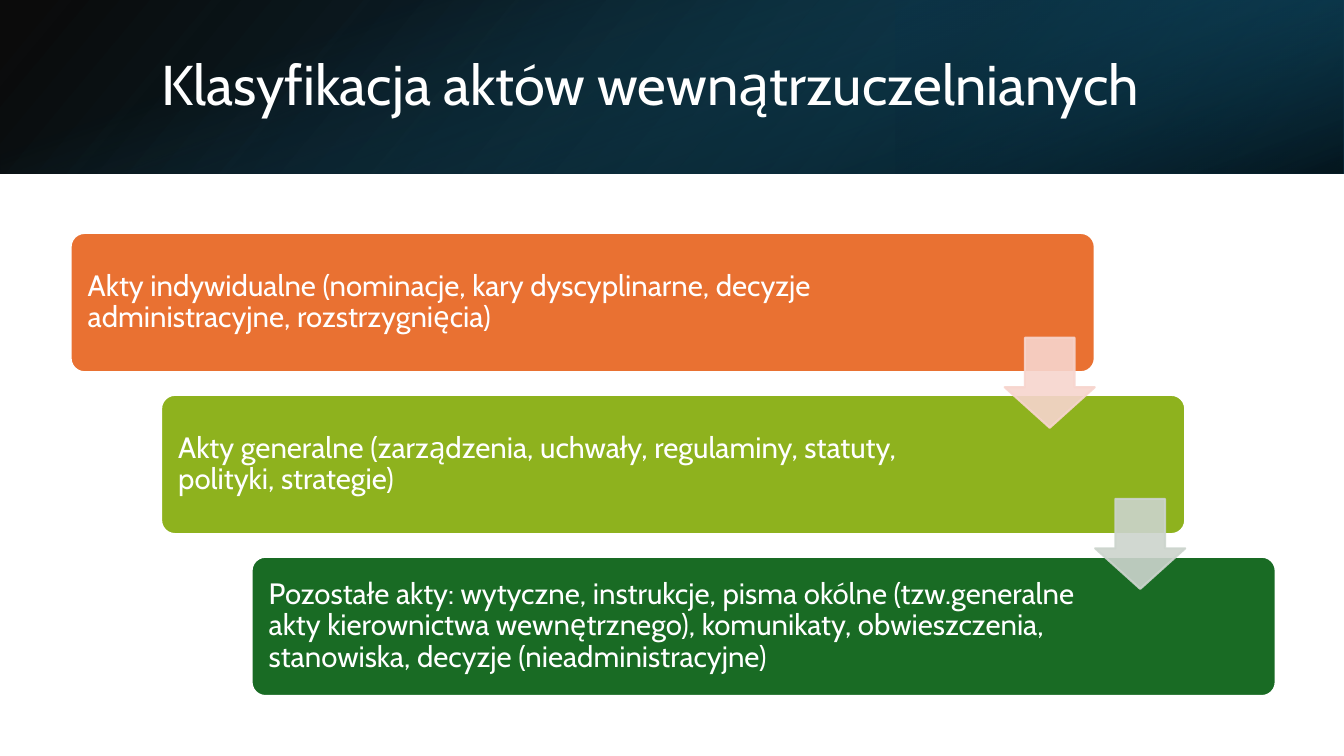
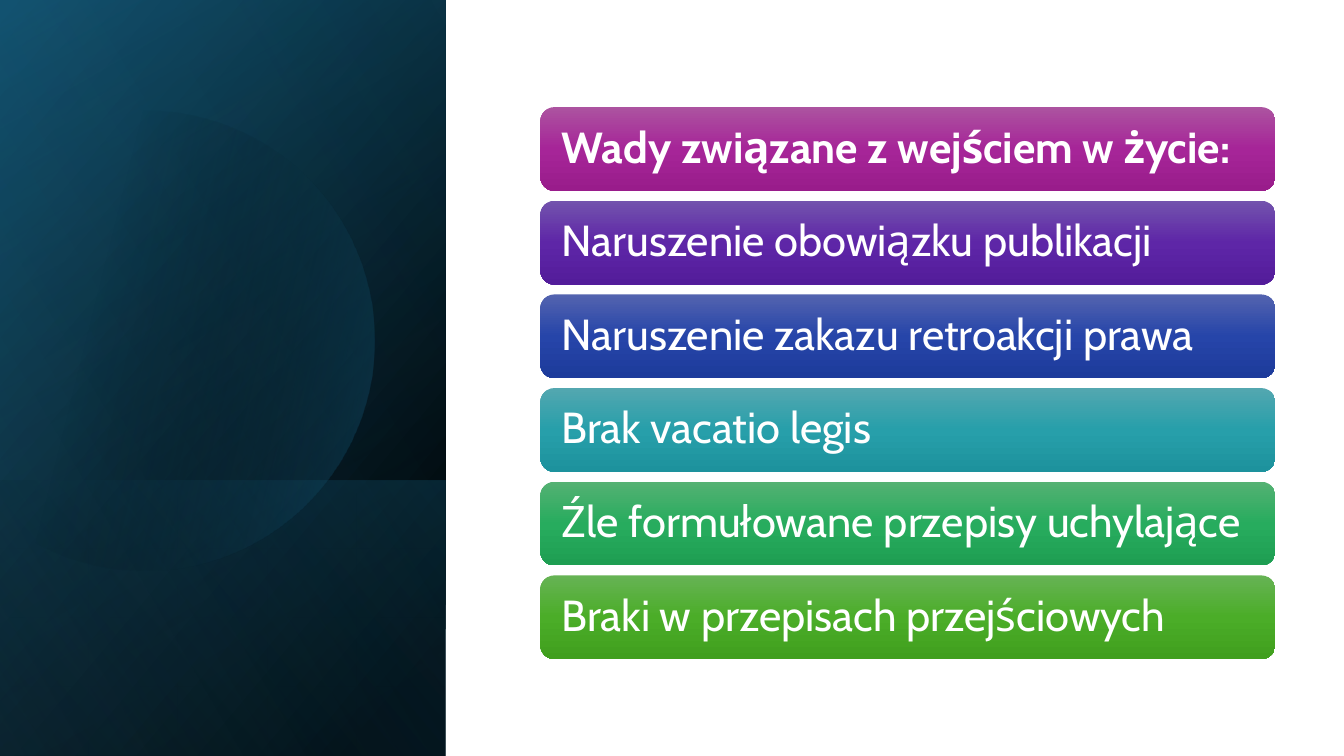
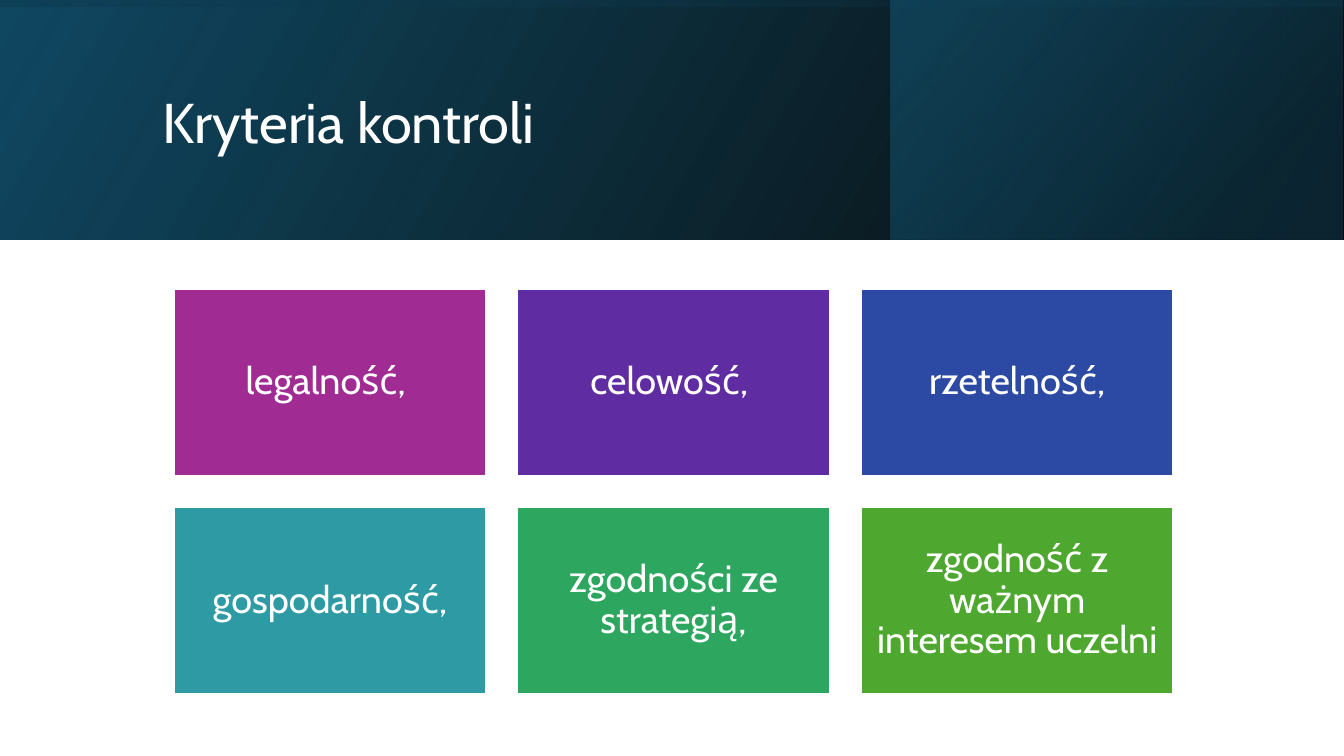
"""Build three slides on internal university acts, their defects and the control criteria."""
import math

from lxml import etree
from pptx import Presentation
from pptx import util as u
from pptx.dml.color import RGBColor
from pptx.enum import shapes, text
from pptx.oxml.ns import qn

FONT = "Cabin"
WHITE = RGBColor(0xFF, 0xFF, 0xFF)
BLACK = RGBColor(0x00, 0x00, 0x00)
NAVY = RGBColor(0x10, 0x48, 0x62)
DEEP = RGBColor(0x0B, 0x30, 0x41)
TEAL = RGBColor(0x15, 0x60, 0x82)
SKY = RGBColor(0x46, 0xB1, 0xE1)
ORANGE = RGBColor(0xE9, 0x71, 0x32)
LIME = RGBColor(0x8E, 0xB2, 0x1E)
GREEN = RGBColor(0x19, 0x6B, 0x24)
PALE_ORANGE = RGBColor(0xF7, 0xD5, 0xCE)
PALE_GREEN = RGBColor(0xCC, 0xD4, 0xCD)
TILE_COLOURS = [RGBColor.from_string(c) for c in
                ("A02B93", "5F2CA1", "2C49A3", "2D9AA4", "2DA65F", "4EA72E")]
BAR_COLOURS = [[RGBColor.from_string(c) for c in row] for row in (
    ("AC53A0", "A62598", "991C8B"), ("7353AD", "5E26A7", "531C9A"),
    ("5363AF", "2645A9", "1D3B9B"), ("53A7B0", "279FAA", "1D929D"),
    ("54B173", "27AC5E", "1E9E52"), ("66B354", "4BAD28", "409F1E"))]
RECT = shapes.MSO_SHAPE.RECTANGLE
ROUNDED = shapes.MSO_SHAPE.ROUNDED_RECTANGLE
ARROW = shapes.MSO_SHAPE.DOWN_ARROW
LEFT = text.PP_ALIGN.LEFT
CENTER = text.PP_ALIGN.CENTER
WIDTH, HEIGHT, PANEL = 33.87, 19.05, 11.23


def paint(sp, angle, stops):
    """Fill with a gradient of (position, colour, opacity) stops, angle clockwise."""
    sp.shadow.inherit = False
    sp.line.fill.background()
    sp.fill.gradient()
    sp.fill.gradient_angle = 360 - angle
    gs_list = sp.element.spPr.find(qn("a:gradFill")).find(qn("a:gsLst"))
    for gs in list(gs_list):
        gs_list.remove(gs)
    for pos, colour, opacity in stops:
        gs = etree.SubElement(gs_list, qn("a:gs"), pos=str(pos * 1000))
        clr = etree.SubElement(gs, qn("a:srgbClr"), val=str(colour))
        etree.SubElement(clr, qn("a:alpha"), val=str(opacity * 1000))


def write(sp, words, size, align=LEFT, margin=0.25, right=None, bold=False):
    """Set white, vertically centred text with the given margins."""
    tf = sp.text_frame
    tf.word_wrap = True
    tf.vertical_anchor = text.MSO_ANCHOR.MIDDLE
    tf.margin_left = u.Cm(margin)
    tf.margin_right = u.Cm(margin if right is None else right)
    tf.margin_top = tf.margin_bottom = u.Cm(0.13)
    p = tf.paragraphs[0]
    p.text = words
    p.alignment = align
    p.line_spacing = 0.9
    f = p.runs[0].font
    f.name, f.size, f.bold = FONT, u.Pt(size), bold
    f.color.rgb = WHITE


prs = Presentation()
prs.slide_width, prs.slide_height = u.Cm(WIDTH), u.Cm(HEIGHT)
acts, defects, criteria = [prs.slides.add_slide(prs.slide_layouts[6]) for _ in range(3)]

bands = [
    (acts, 0, 0, WIDTH, 4.37, 0, True, 140, [(0, BLACK, 96), (100, NAVY, 100)]),
    (acts, 22.58, 0, 11.29, 4.37, 180, True, 320, [(19, DEEP, 68), (100, TEAL, 79)]),
    (acts, 0, 0, WIDTH, 4.37, 90, False, 340, [(23, TEAL, 0), (99, BLACK, 74)]),
    (defects, 0, 0, PANEL, HEIGHT, 90, True, 50, [(8, BLACK, 100), (100, NAVY, 100)]),
    (defects, 0, 0, PANEL, HEIGHT, 90, True, 30, [(0, BLACK, 0), (99, TEAL, 46)]),
    (defects, 0, 12.1, PANEL, 6.95, 90, True, 130, [(2, TEAL, 29), (100, BLACK, 30)]),
    (defects, 0, 0, PANEL, HEIGHT, 90, True, 120, [(0, BLACK, 0), (99, SKY, 11)]),
    (criteria, 0, 0, WIDTH, 6.03, 0, True, 330, [(0, BLACK, 96), (100, NAVY, 100)]),
    (criteria, 22.45, 0, 11.38, 6.03, 0, True, 320, [(19, DEEP, 68), (100, TEAL, 48)]),
    (criteria, 0, 0, WIDTH, 6.03, 270, True, 350, [(23, NAVY, 16), (99, BLACK, 45)]),
]
for s, x, y, w, h, rotation, flipped, angle, stops in bands:
    if rotation % 180:
        x, y, w, h = x + (w - h) / 2, y + (h - w) / 2, h, w
    sp = s.shapes.add_shape(RECT, u.Cm(x), u.Cm(y), u.Cm(w), u.Cm(h))
    sp.rotation = rotation
    if flipped:
        sp.element.spPr.xfrm.set("flipH", "1")
    paint(sp, angle, stops)

for s, x, w, h, title in [
    (acts, 3.81, 27.89, 2.44, "Klasyfikacja aktów wewnątrzuczelnianych"),
    (criteria, 3.84, 27, 4.37, "Kryteria kontroli"),
]:
    sp = s.shapes.add_textbox(u.Cm(x), u.Cm(0.97), u.Cm(w), u.Cm(h))
    write(sp, title, 40)

steps = [
    (ORANGE, 3.9, "Akty indywidualne (nominacje, kary dyscyplinarne, decyzje "
     "administracyjne, rozstrzygnięcia)"),
    (LIME, 4.88, "Akty generalne (zarządzenia, uchwały, regulaminy, statuty, "
     "polityki, strategie)"),
    (GREEN, 4.88, "Pozostałe akty: wytyczne, instrukcje, pisma okólne (tzw.generalne "
     "akty kierownictwa wewnętrznego), komunikaty, obwieszczenia, stanowiska, "
     "decyzje (nieadministracyjne)"),
]
for i, (colour, right, words) in enumerate(steps):
    sp = acts.shapes.add_shape(ROUNDED, u.Cm(1.78 + 2.28 * i), u.Cm(5.87 + 4.08 * i),
                               u.Cm(25.81), u.Cm(3.51))
    sp.adjustments[0] = 0.1
    sp.shadow.inherit = False
    sp.fill.solid()
    sp.fill.fore_color.rgb = colour
    sp.line.color.rgb = WHITE
    sp.line.width = u.Pt(1.5)
    write(sp, words, 21, margin=0.33, right=right)

for i, colour in enumerate((PALE_ORANGE, PALE_GREEN)):
    sp = acts.shapes.add_shape(ARROW, u.Cm(25.32 + 2.28 * i), u.Cm(8.51 + 4.06 * i),
                               u.Cm(2.27), u.Cm(2.27))
    sp.adjustments[0], sp.adjustments[1] = 0.55, 0.45
    sp.shadow.inherit = False
    sp.fill.solid()
    sp.fill.fore_color.rgb = colour
    sp.line.color.rgb = colour
    sp.line.width = u.Pt(1.5)
    for clr in sp.element.spPr.iter(qn("a:srgbClr")):
        etree.SubElement(clr, qn("a:alpha"), val="90000")

cx, cy, radius = 3.66, 8.59, 5.79
limit = math.acos(-cx / radius)
arc = [limit * (2 * i / 90 - 1) for i in range(91)]
points = [(u.Cm(cx + radius * math.cos(a)), u.Cm(cy + radius * math.sin(a))) for a in arc]
builder = defects.shapes.build_freeform(*points[0])
builder.add_line_segments(points[1:], close=True)
paint(builder.convert_to_shape(), 14, [(29, BLACK, 0), (100, TEAL, 43)])

bars = ["Wady związane z wejściem w życie:", "Naruszenie obowiązku publikacji",
        "Naruszenie zakazu retroakcji prawa", "Brak vacatio legis",
        "Źle formułowane przepisy uchylające", "Braki w przepisach przejściowych"]
for i, (words, colours) in enumerate(zip(bars, BAR_COLOURS)):
    sp = defects.shapes.add_shape(ROUNDED, u.Cm(13.62), u.Cm(2.7 + 2.36 * i),
                                  u.Cm(18.52), u.Cm(2.11))
    paint(sp, 90, [(50 * n, colour, 100) for n, colour in enumerate(colours)])
    write(sp, words, 31, margin=0.43, bold=i == 0)

tiles = ["legalność, ", "celowość, ", "rzetelność,", "gospodarność,",
         "zgodności ze strategią,", "zgodność z ważnym interesem uczelni"]
for i, (words, colour) in enumerate(zip(tiles, TILE_COLOURS)):
    row, col = divmod(i, 3)
    sp = criteria.shapes.add_shape(RECT, u.Cm(4.38 + 8.66 * col), u.Cm(7.27 + 5.51 * row),
                                   u.Cm(7.87), u.Cm(4.72))
    sp.shadow.inherit = False
    sp.fill.solid()
    sp.fill.fore_color.rgb = colour
    sp.line.color.rgb = WHITE
    sp.line.width = u.Pt(1.5)
    write(sp, words, 27, CENTER, margin=0.28)

prs.save("out.pptx")
